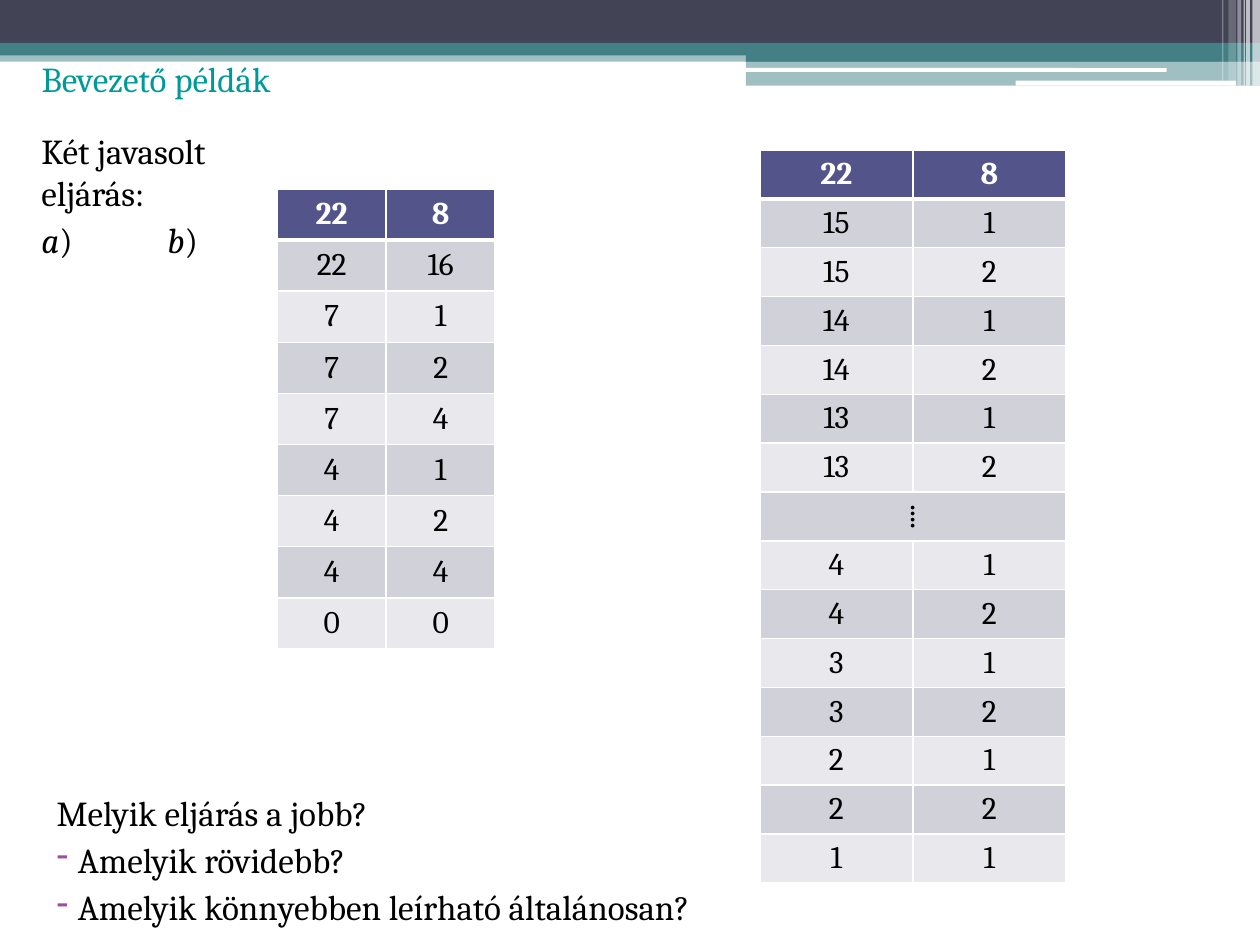
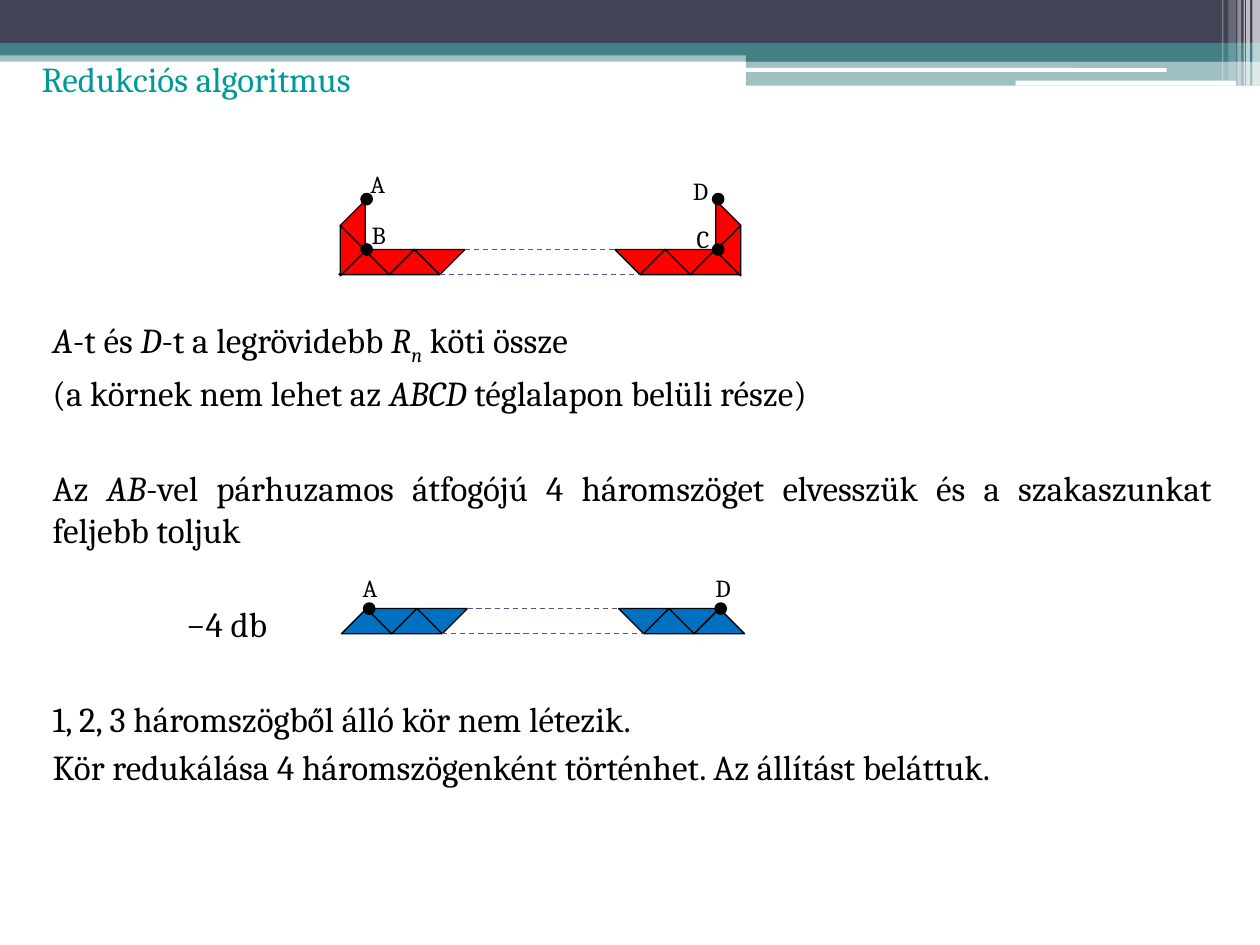
from pptx import Presentation
from pptx import util as u
from pptx.dml import color
from pptx.enum import dml, shapes, text
from pptx.oxml import xmlchemy

PX = 9144  # EMU in one px, 100 px to the inch
FONT = "Cambria"
DOTS = "⁞"
COLORS = {
    "white": "FFFFFF", "black": "000000", "title": "009999",
    "dark": "424456", "teal": "438086", "header": "53548A",
    "odd": "D1D1DA", "even": "E9E9ED", "bullet": "A04DA3",
    "red": "FF0000", "blue": "0070C0",
}

# Header bands: left, top, width, height, colour, opacity in percent
BANDS = [
    (0, 40, 1000, 9, "teal", 50),
    (0, 0, 1000, 34, "dark", 100),
    (0, 34, 1000, 10, "teal", 100),
    (592, 39, 408, 10, "teal", 100),
    (592, 48, 408, 20, "teal", 50),
]
# White rounded bars in the bands: left, top, width, height
BARS = [(591, 54, 335, 3), (806, 64, 175, 4)]
# White stripes down from the top edge: left, width, height, opacity
STRIPES = [(994, 6, 68, 65), (989, 3, 68, 65), (987, 1, 68, 60),
           (982, 3, 68, 40), (975, 6, 64, 20), (970, 1, 64, 30)]

# Every triangle has its base twice as long as its height
HEIGHT = 20
BASE = 2 * HEIGHT
DOT = 8


def emu(*lengths):
    return [u.Emu(length * PX) for length in lengths]


def rgb(name):
    return color.RGBColor.from_string(COLORS[name])


def add_xml(parent, tag, **attributes):
    child = xmlchemy.OxmlElement(tag)
    for key, value in attributes.items():
        child.set(key, str(value))
    parent.append(child)
    return child


class Deck:
    def __init__(self):
        self.prs = Presentation()
        self.prs.slide_width, self.prs.slide_height = emu(1000, 750)
        self.slide = None

    def new_slide(self, heading):
        self.slide = self.prs.slides.add_slide(self.prs.slide_layouts[5])
        self.header()
        title = self.slide.shapes.title
        title.left, title.top, title.width, title.height = emu(23, 28, 567, 69)
        title.text_frame.vertical_anchor = text.MSO_ANCHOR.MIDDLE
        paragraph = title.text_frame.paragraphs[0]
        paragraph.alignment = text.PP_ALIGN.LEFT
        self.run(paragraph, heading, ink="title")

    def header(self):
        kinds = shapes.MSO_SHAPE
        for *place, fill, opacity in BANDS:
            self.shape(kinds.RECTANGLE, *place, fill, opacity=opacity)
        for place in BARS:
            self.shape(kinds.ROUNDED_RECTANGLE, *place, "white")
        for left, width, height, opacity in STRIPES:
            self.shape(kinds.RECTANGLE, left, 0, width, height, "white",
                       opacity=opacity)

    # Text
    def run(self, paragraph, words, style="", size=20, ink="black", face=FONT):
        run = paragraph.add_run()
        run.text = words
        font = run.font
        font.name, font.size, font.color.rgb = face, u.Pt(size), rgb(ink)
        font.bold = style == "bold"
        font.italic = style in ("italic", "sub")
        if style == "sub":
            run._r.get_or_add_rPr().set("baseline", "-25000")

    def text(self, left, top, width, height, paragraphs, size=20, before=3,
             align=text.PP_ALIGN.LEFT, bullets_from=None, tab=None):
        """Each paragraph is a list of (words, style) pairs."""
        box = self.slide.shapes.add_textbox(*emu(left, top, width, height))
        frame = box.text_frame
        frame.word_wrap = True
        for i, runs in enumerate(paragraphs):
            paragraph = frame.paragraphs[0] if i == 0 else frame.add_paragraph()
            paragraph.alignment = align
            paragraph.space_before = u.Pt(before)
            if bullets_from is not None and i >= bullets_from:
                self.bullet(paragraph)
            if tab:
                stops = add_xml(paragraph._p.get_or_add_pPr(), "a:tabLst")
                add_xml(stops, "a:tab", pos=tab * PX, algn="l")
            for words, style in runs:
                self.run(paragraph, words, style, size)

    def bullet(self, paragraph, hang=17):
        props = paragraph._p.get_or_add_pPr()
        props.set("marL", str(hang * PX))
        props.set("indent", str(-hang * PX))
        add_xml(add_xml(props, "a:buClr"), "a:srgbClr", val=COLORS["bullet"])
        add_xml(props, "a:buChar", char="-")

    def label(self, left, top, letter):
        self.text(left, top, 45, 34, [[(letter, "")]], size=14, before=0)

    # Shapes and lines
    def shape(self, kind, left, top, width, height, fill, line=0, turn=0,
              opacity=100):
        shape = self.slide.shapes.add_shape(kind, *emu(left, top, width, height))
        shape.shadow.inherit = False
        shape.rotation = turn
        shape.fill.solid()
        shape.fill.fore_color.rgb = rgb(fill)
        if opacity < 100:
            tint = shape._element.spPr.xpath("./a:solidFill/a:srgbClr")[0]
            add_xml(tint, "a:alpha", val=opacity * 1000)
        if line:
            shape.line.color.rgb = rgb("black")
            shape.line.width = u.Pt(line)
        else:
            shape.line.fill.background()

    def triangle(self, left, top, fill, turn):
        self.shape(shapes.MSO_SHAPE.ISOSCELES_TRIANGLE, left, top, BASE, HEIGHT,
                   fill, line=0.75, turn=turn)

    def dot(self, x, y):
        """A dot centred on the point x, y."""
        self.shape(shapes.MSO_SHAPE.OVAL, x - DOT // 2, y - DOT // 2, DOT, DOT,
                   "black", line=1.5)

    def dashed(self, x1, x2, y):
        edge = self.slide.shapes.add_connector(
            shapes.MSO_CONNECTOR.STRAIGHT, *emu(x1, y, x2, y))
        edge.line.color.rgb = rgb("header")
        edge.line.width = u.Pt(0.75)
        edge.line.dash_style = dml.MSO_LINE.DASH
        add_xml(edge._element.spPr, "a:effectLst")

    def strip(self, left, top, fill, first_turn):
        """Four triangles side by side, each turned against the last."""
        for i in range(4):
            self.triangle(left + i * HEIGHT, top, fill,
                          (first_turn + 180 * i) % 360)

    def chain(self, left, right, top, fill):
        """A strip at each end, joined by a dashed upper and lower edge."""
        self.strip(left, top, fill, first_turn=0)
        self.strip(right, top, fill, first_turn=180)
        self.dashed(left + 5 * HEIGHT, right, top)
        self.dashed(left + 4 * HEIGHT, right + HEIGHT, top + HEIGHT)

    def upright_end(self, left, bottom, upper_turn):
        """Two triangles on top of each other, with opposite turns."""
        self.triangle(left, bottom - HEIGHT, "red", upper_turn)
        self.triangle(left, bottom, "red", (upper_turn + 180) % 360)

    # Tables
    def table(self, left, top, width, height, rows):
        """A row with a single value spans both columns."""
        grid = self.slide.shapes.add_table(
            len(rows), 2, *emu(left, top, width, height)).table
        for r, values in enumerate(rows):
            grid.rows[r].height = u.Emu(height * PX // len(rows))
            if len(values) == 1:
                grid.cell(r, 0).merge(grid.cell(r, 1))
            for c in range(2):
                value = values[c] if c < len(values) else ""
                self.cell(grid.cell(r, c), r, str(value))

    def cell(self, cell, row, value):
        header = row == 0
        cell.vertical_anchor = text.MSO_ANCHOR.MIDDLE
        cell.margin_top = cell.margin_bottom = u.Emu(3 * PX)
        cell.fill.solid()
        cell.fill.fore_color.rgb = rgb(
            "header" if header else "odd" if row % 2 else "even")
        self.borders(cell, {"B": header, "T": row == 1})
        if value:
            paragraph = cell.text_frame.paragraphs[0]
            paragraph.alignment = text.PP_ALIGN.CENTER
            self.run(paragraph, value, "bold" if header else "", 18,
                     "white" if header else "black",
                     "Times New Roman" if value == DOTS else FONT)

    def borders(self, cell, thick):
        props = cell._tc.get_or_add_tcPr()
        for place, side in enumerate("LRTB"):
            border = xmlchemy.OxmlElement("a:ln" + side)
            border.set("w", str(u.Pt(3 if thick.get(side) else 1)))
            add_xml(add_xml(border, "a:solidFill"), "a:srgbClr",
                    val=COLORS["white"])
            props.insert(place, border)


def intro_examples(deck):
    deck.new_slide("Bevezető példák")
    deck.text(23, 98, 200, 85, [
        [("Két javasolt eljárás:", "")],
        [("a", "italic"), (")\t", ""), ("b", "italic"), (")", "")],
    ], tab=100)
    deck.text(35, 623, 565, 122, [
        [("Melyik eljárás a jobb?", "")],
        [("Amelyik rövidebb?", "")],
        [("Amelyik könnyebben leírható általánosan?", "")],
    ], bullets_from=1)

    # The two procedures, step by step, from the same start
    start = (22, 8)
    doubling = [(22, 16)] + [(n, k) for n in (7, 4) for k in (1, 2, 4)]
    deck.table(220, 150, 173, 365, [start, *doubling, (0, 0)])

    first_steps = [(n, k) for n in (15, 14, 13) for k in (1, 2)]
    last_steps = [(n, k) for n in (4, 3, 2) for k in (1, 2)]
    deck.table(603, 119, 243, 582,
               [start, *first_steps, (DOTS,), *last_steps, (1, 1)])


def reduction(deck):
    deck.new_slide("Redukciós algoritmus")

    # Explanation
    deck.text(32, 248, 940, 90, [
        [("A", "italic"), ("-t és ", ""), ("D", "italic"),
         ("-t a legrövidebb ", ""), ("R", "italic"), ("n", "sub"),
         (" köti össze", "")],
        [("(a körnek nem lehet az ", ""), ("ABCD", "italic"),
         (" téglalapon belüli része)", "")],
    ])
    deck.text(32, 365, 940, 80, [
        [("Az ", ""), ("AB", "italic"),
         ("-vel párhuzamos átfogójú 4 háromszöget elvesszük és a "
          "szakaszunkat feljebb toljuk", "")],
    ], align=text.PP_ALIGN.JUSTIFY)
    deck.text(138, 473, 110, 47, [[("−4 db", "")]])
    deck.text(32, 549, 940, 85, [
        [("1, 2, 3 háromszögből álló kör nem létezik.", "")],
        [("Kör redukálása 4 háromszögenként történhet. "
          "Az állítást beláttuk.", "")],
    ])

    # Chain before the reduction: upright ends lead from B to A and C to D
    left, right, top = 269, 488, 198
    deck.chain(left, right, top, "red")
    deck.upright_end(left - 9, top - 9, upper_turn=270)
    deck.upright_end(right + 70, top - 9, upper_turn=90)
    for x in (left + 22, right + 82):
        for y in (top - BASE, top):
            deck.dot(x, y)
    for label_left, label_top, letter in [(284, 129, "A"), (285, 170, "B"),
                                          (543, 173, "C"), (540, 135, "D")]:
        deck.label(label_left, label_top, letter)

    # Chain after the reduction: A and D lie on its upper edge
    left, right, top = 271, 491, 483
    deck.chain(left, right, top, "blue")
    for x, label_left, letter in [(left + 22, 278, "A"), (right + 81, 558, "D")]:
        deck.dot(x, top)
        deck.label(label_left, 450, letter)


def main():
    deck = Deck()
    intro_examples(deck)
    reduction(deck)
    deck.prs.save("out.pptx")


if __name__ == "__main__":
    main()
